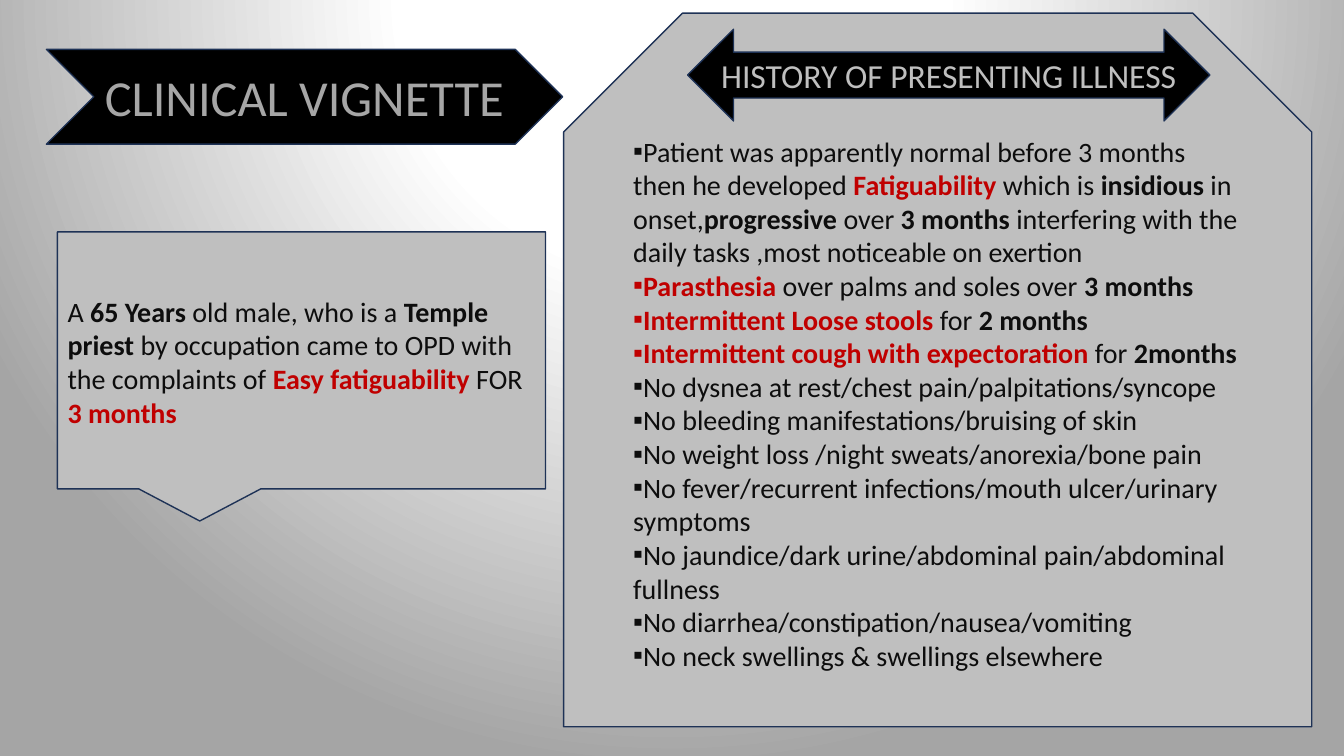
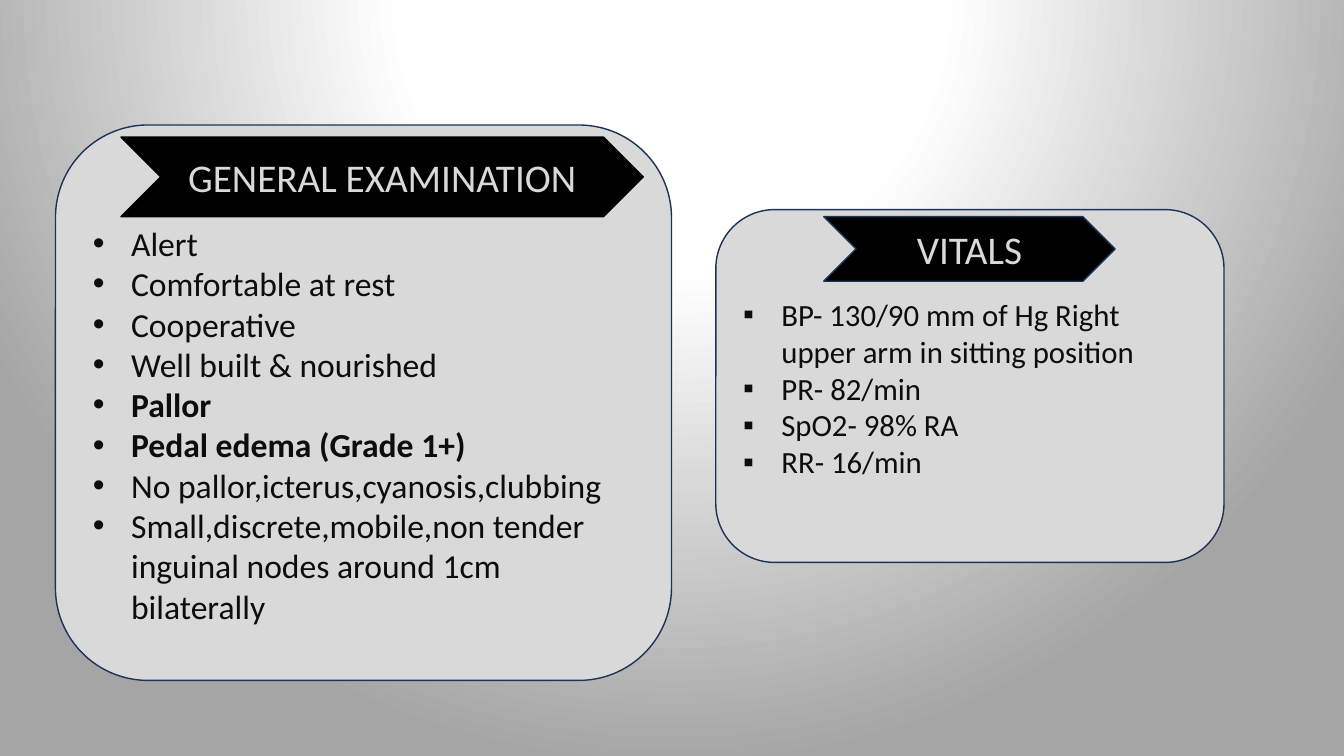
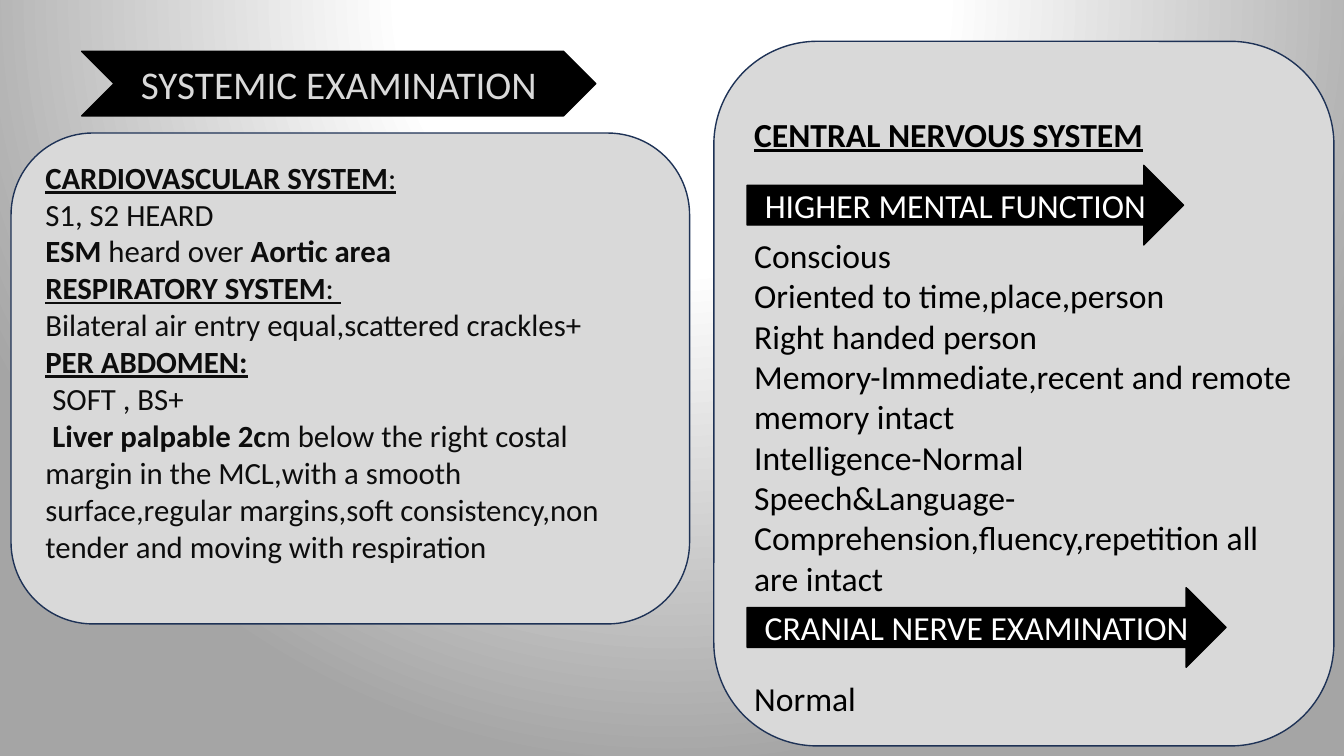
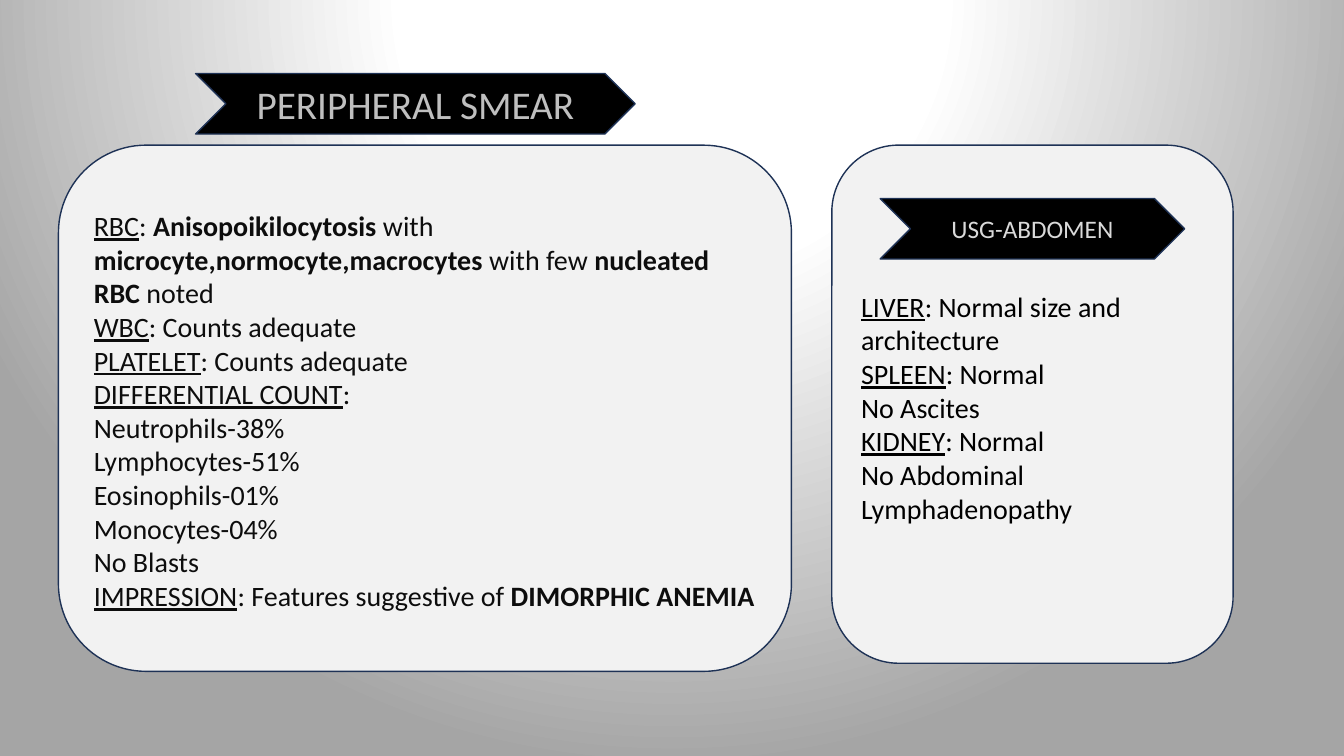
from dataclasses import dataclass

from pptx import Presentation
from pptx import util as u
from pptx.dml.color import RGBColor
from pptx.enum import shapes, text
from pptx.oxml import ns, parse_xml

KIND = shapes.MSO_SHAPE


@dataclass(frozen=True)
class Theme:
    font: str = "Calibri"
    black: str = "000000"
    ink: str = "0D0D0D"
    red: str = "C00000"
    white: str = "FFFFFF"
    navy: str = "1E3256"
    backdrop: str = "A5A5A5"
    title_grey: str = "A6A6A6"
    mid_grey: str = "BFBFBF"
    light_grey: str = "D9D9D9"
    pale_grey: str = "F2F2F2"
    display: int = 36
    title: int = 28
    large: int = 24
    medium: int = 22
    body: int = 20
    small: int = 18
    outline: int = 1
    bullet_indent: float = 0.38


THEME = Theme()


@dataclass(frozen=True)
class Span:
    text: str
    bold: bool = False
    underline: bool = False
    color: str = ""


@dataclass(frozen=True)
class Style:
    """Type size, colour and bullet of one list."""
    size: int
    color: str = THEME.ink
    bullet: str = ""
    indent: float = 0


def bold(words):
    return Span(words, bold=True)


def red(words):
    return Span(words, bold=True, color=THEME.red)


def under(words):
    return Span(words, underline=True)


def heading(words):
    return Span(words, bold=True, underline=True)


def inches(box):
    return [u.Inches(length) for length in box]


def set_background(deck):
    """Give the master a radial gradient centred above the slide."""
    content = deck.slide_master.element.find(ns.qn("p:cSld"))
    for old in content.findall(ns.qn("p:bg")):
        content.remove(old)
    stops = "".join(
        f'<a:gs pos="{percent * 1000}"><a:srgbClr val="{color}"/></a:gs>'
        for percent, color in ((0, THEME.white), (35, THEME.white), (100, THEME.backdrop)))
    content.insert(0, parse_xml(
        f'<p:bg {ns.nsdecls("p", "a")}><p:bgPr><a:gradFill rotWithShape="1">'
        f'<a:gsLst>{stops}</a:gsLst><a:path path="circle">'
        '<a:fillToRect l="50000" t="-80000" r="50000" b="180000"/></a:path>'
        '</a:gradFill><a:effectLst/></p:bgPr></p:bg>'))


def add_span(para, span, size, color):
    run = para.add_run()
    run.text = span.text
    run.font.name = THEME.font
    run.font.size = u.Pt(size)
    run.font.bold = span.bold
    run.font.underline = span.underline
    run.font.color.rgb = RGBColor.from_string(span.color or color)


def add_figure(page, kind, box, fill, line=THEME.navy):
    """Add a filled shape behind the placeholders."""
    shape = page.shapes.add_shape(kind, *inches(box))
    shape.shadow.inherit = False
    shape.fill.solid()
    shape.fill.fore_color.rgb = RGBColor.from_string(fill)
    shape.line.color.rgb = RGBColor.from_string(line)
    shape.line.width = u.Pt(THEME.outline)
    page.shapes.title._element.addprevious(shape._element)
    return shape


def add_banner(page, kind, box, words, size, color, line=THEME.navy):
    frame = add_figure(page, kind, box, THEME.black, line).text_frame
    frame.word_wrap = True
    frame.vertical_anchor = text.MSO_ANCHOR.MIDDLE
    para = frame.paragraphs[0]
    para.alignment = text.PP_ALIGN.CENTER
    add_span(para, Span(words), size, color)


def prepare(holder, box, anchor):
    """Move a placeholder and return its text frame without margins."""
    holder.left, holder.top, holder.width, holder.height = inches(box)
    frame = holder.text_frame
    frame.margin_left = frame.margin_right = frame.margin_top = frame.margin_bottom = 0
    frame.word_wrap = True
    frame.auto_size = text.MSO_AUTO_SIZE.NONE
    frame.vertical_anchor = anchor
    return frame


def add_title(page, box, words, size, color, line=THEME.navy):
    """Lay the title over a black chevron."""
    add_figure(page, KIND.CHEVRON, box, THEME.black, line)
    para = prepare(page.shapes.title, box, text.MSO_ANCHOR.MIDDLE).paragraphs[0]
    para.alignment = text.PP_ALIGN.CENTER
    add_span(para, Span(words), size, color)


def set_bullet(para, style):
    props = para._p.get_or_add_pPr()
    indent = u.Inches(style.indent)
    props.set("marL", str(indent))
    props.set("indent", str(-indent))
    tag = f'a:buChar {ns.nsdecls("a")} char="{style.bullet}"' if style.bullet else f'a:buNone {ns.nsdecls("a")}'
    props.append(parse_xml(f"<{tag}/>"))


def add_panel(page, number, kind, box, fill, inset, style, lines, gaps=None):
    """Fill body placeholder `number` over a panel.

    inset: left, top, right and bottom distance from the panel to its text.
    lines: one string, Span or list of them for each paragraph.
    gaps: space before, in points, by paragraph index.
    """
    add_figure(page, kind, box, fill)
    left, top, width, height = box
    text_box = (left + inset[0], top + inset[1],
                width - inset[0] - inset[2], height - inset[1] - inset[3])
    frame = prepare(page.placeholders[number], text_box, text.MSO_ANCHOR.TOP)
    for index, line in enumerate(lines):
        para = frame.add_paragraph() if index else frame.paragraphs[0]
        set_bullet(para, style)
        para.alignment = text.PP_ALIGN.LEFT
        para.space_before = u.Pt((gaps or {}).get(index, 0))
        for part in line if isinstance(line, list) else [line]:
            span = part if isinstance(part, Span) else Span(part)
            add_span(para, span, style.size, style.color)


def build_vignette(page):
    add_panel(page, 2, KIND.SNIP_2_SAME_RECTANGLE, (5.59, 0.13, 7.42, 7.08),
              THEME.mid_grey, (0.69, 1.2, 0.69, 0.5), Style(THEME.body, bullet="▪"), [
        ["Patient was apparently normal before 3 months then he developed ",
         red("Fatiguability "), "which is ", bold("insidious"), " in onset,",
         bold("progressive"), " over ", bold("3 months "),
         "interfering with the daily tasks ,most noticeable on exertion"],
        [red("Parasthesia"), " over palms and soles over ", bold("3 months")],
        [red("Intermittent Loose stools "), "for ", bold("2 months")],
        [red("Intermittent cough with expectoration "), "for ", bold("2months")],
        "No dysnea at rest/chest pain/palpitations/syncope",
        "No bleeding manifestations/bruising of skin",
        "No weight loss /night sweats/anorexia/bone pain",
        "No fever/recurrent infections/mouth ulcer/urinary symptoms",
        "No jaundice/dark urine/abdominal pain/abdominal fullness",
        "No diarrhea/constipation/nausea/vomiting",
        "No neck swellings & swellings elsewhere"])
    add_panel(page, 1, KIND.RECTANGULAR_CALLOUT, (0.57, 2.3, 4.84, 2.55),
              THEME.mid_grey, (0.1, 0.62, 0.1, 0.6), Style(THEME.body), [
        ["A ", bold("65 Years "), "old male, who is a ", bold("Temple priest"),
         " by occupation came to OPD with the complaints of ",
         red("Easy fatiguability "), "FOR ", red("3 months")]])
    add_title(page, (0.46, 0.49, 5.12, 0.94), "CLINICAL VIGNETTE",
              THEME.display, THEME.title_grey)
    add_banner(page, KIND.LEFT_RIGHT_ARROW, (6.82, 0.29, 5.18, 0.91),
               "HISTORY OF PRESENTING ILLNESS", THEME.large, THEME.mid_grey)


def build_general_examination(page):
    add_panel(page, 1, KIND.FLOWCHART_ALTERNATE_PROCESS, (0.55, 1.24, 6.11, 5.51),
              THEME.light_grey, (0.37, 0.97, 0.37, 0.5),
              Style(THEME.large, bullet="•", indent=THEME.bullet_indent), [
        "Alert", "Comfortable at rest", "Cooperative", "Well built & nourished",
        bold("Pallor"), bold("Pedal edema (Grade 1+)"),
        "No pallor,icterus,cyanosis,clubbing",
        "Small,discrete,mobile,non tender inguinal nodes around 1cm bilaterally"])
    add_title(page, (1.2, 1.36, 5.18, 0.79), "GENERAL EXAMINATION",
              THEME.title, THEME.light_grey, THEME.black)
    add_panel(page, 2, KIND.FLOWCHART_ALTERNATE_PROCESS, (7.1, 2.08, 5.04, 3.5),
              THEME.light_grey, (0.27, 0.85, 0.27, 0.7),
              Style(THEME.medium, bullet="▪", indent=THEME.bullet_indent), [
        "BP- 130/90 mm of Hg Right upper arm in sitting position",
        "PR- 82/min", "SpO2- 98% RA", "RR- 16/min"])
    add_banner(page, KIND.CHEVRON, (8.17, 2.15, 2.89, 0.64), "VITALS",
               THEME.title, THEME.light_grey)


def build_systemic_examination(page):
    add_panel(page, 1, KIND.FLOWCHART_ALTERNATE_PROCESS, (0.11, 1.32, 6.73, 4.87),
              THEME.light_grey, (0.34, 0.25, 0.34, 0.5), Style(THEME.medium), [
        [heading("CARDIOVASCULAR SYSTEM"), under(":")],
        "S1, S2 HEARD",
        [bold("ESM"), " heard over ", bold("Aortic area")],
        [heading("RESPIRATORY SYSTEM"), under(": ")],
        "Bilateral air entry equal,scattered crackles+",
        heading("PER ABDOMEN:"),
        " SOFT , BS+",
        [" ", bold("Liver palpable 2c"),
         "m below the right costal margin in the MCL,with a smooth surface,regular "
         "margins,soft consistency,non tender and moving with respiration"]])
    add_title(page, (0.81, 0.51, 5.1, 0.64), "SYSTEMIC EXAMINATION",
              THEME.title, THEME.light_grey, THEME.black)
    arrow_gap = 57.6
    add_panel(page, 2, KIND.ROUNDED_RECTANGLE, (7.08, 0.41, 6.15, 6.99),
              THEME.light_grey, (0.4, 0.72, 0.4, 0.25),
              Style(THEME.large, THEME.black), [
        heading("CENTRAL NERVOUS SYSTEM"),
        "Conscious", "Oriented to time,place,person", "Right handed person",
        "Memory-Immediate,recent and remote memory intact",
        "Intelligence-Normal",
        "Speech&Language-Comprehension,fluency,repetition all are intact",
        "Normal"], {1: arrow_gap, 7: arrow_gap})
    for top, width, words in ((1.64, 4.33, "HIGHER MENTAL FUNCTION"),
                              (5.83, 4.75, "CRANIAL NERVE EXAMINATION")):
        add_banner(page, KIND.RIGHT_ARROW, (7.41, top, width, 0.79), words,
                   THEME.large, THEME.white, THEME.black)


def build_smear(page):
    add_panel(page, 1, KIND.FLOWCHART_ALTERNATE_PROCESS, (0.58, 1.44, 7.27, 5.22),
              THEME.pale_grey, (0.35, 0.63, 0.35, 0.5), Style(THEME.body), [
        [under("RBC"), ": ", bold("Anisopoikilocytosis"), " with ",
         bold("microcyte,normocyte,macrocytes "), "with few ",
         bold("nucleated RBC "), "noted"],
        [under("WBC"), ": Counts adequate"],
        [under("PLATELET"), ": Counts adequate"],
        [under("DIFFERENTIAL COUNT"), ":"],
        "Neutrophils-38%", "Lymphocytes-51%", "Eosinophils-01%",
        "Monocytes-04%", "No Blasts",
        [under("IMPRESSION"), ": Features suggestive of ", bold("DIMORPHIC ANEMIA")]])
    add_title(page, (1.94, 0.73, 4.36, 0.6), "PERIPHERAL SMEAR",
              THEME.title, THEME.mid_grey)
    add_panel(page, 2, KIND.FLOWCHART_ALTERNATE_PROCESS, (8.25, 1.44, 3.98, 5.14),
              THEME.pale_grey, (0.29, 1.43, 0.29, 1.2),
              Style(THEME.body, THEME.black), [
        [under("LIVER"), ": Normal size and architecture"],
        [under("SPLEEN"), ": Normal"],
        "No Ascites",
        [under("KIDNEY"), ": Normal"],
        "No Abdominal Lymphadenopathy"])
    add_banner(page, KIND.CHEVRON, (8.73, 1.97, 3.02, 0.6), "USG-ABDOMEN",
               THEME.small, THEME.light_grey)


def main():
    deck = Presentation()
    deck.slide_width, deck.slide_height = inches((13.33, 7.5))
    set_background(deck)
    two_content = deck.slide_layouts.get_by_name("Two Content")
    for build in (build_vignette, build_general_examination,
                  build_systemic_examination, build_smear):
        build(deck.slides.add_slide(two_content))
    deck.save("out.pptx")


if __name__ == "__main__":
    main()
